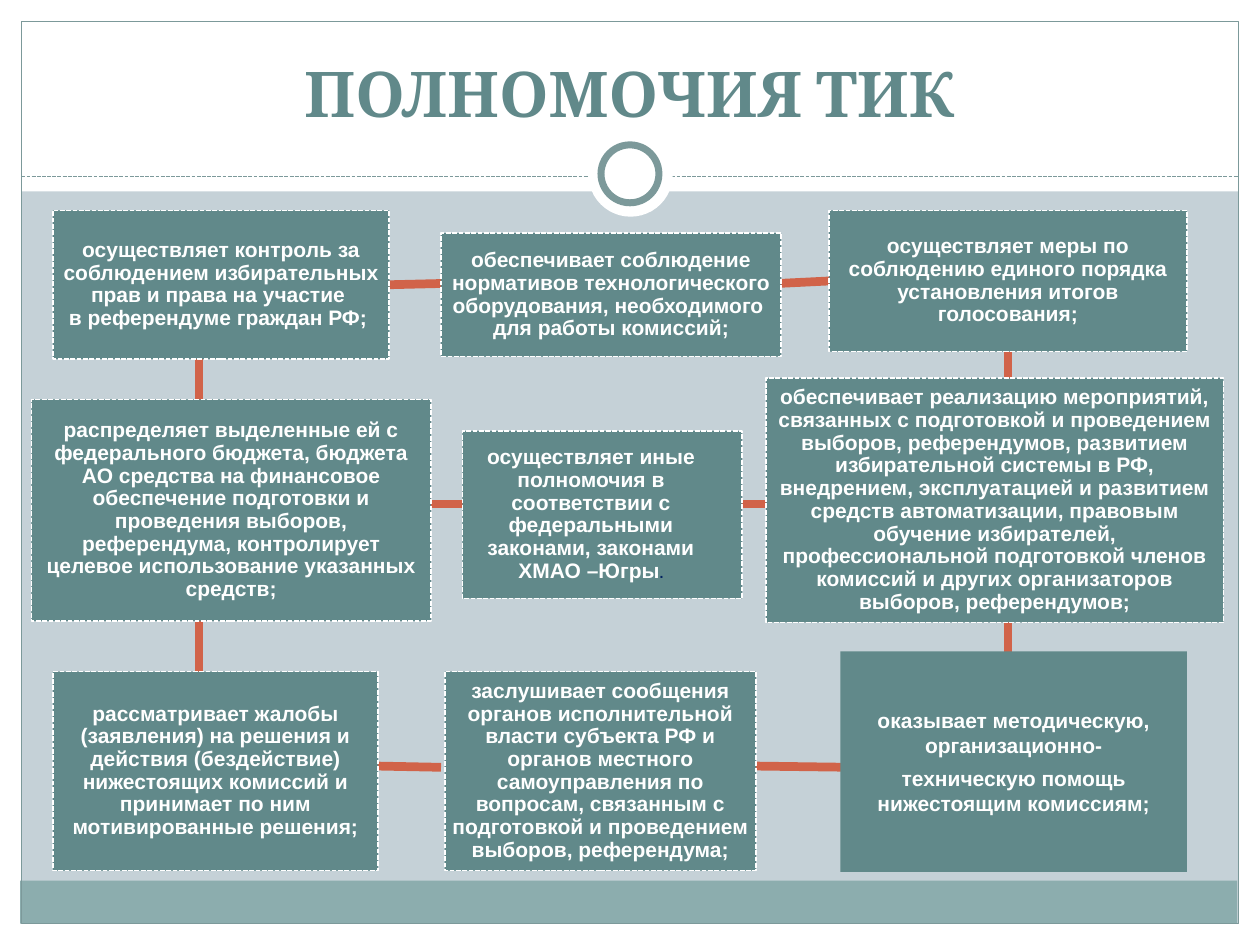
from dataclasses import dataclass
from typing import Optional

import pptx
import pptx.dml.color
import pptx.enum.dml
import pptx.enum.shapes
import pptx.enum.text
import pptx.oxml
import pptx.util

PX = 9144
TEAL, TEAL_LINE, ORANGE, WHITE, NAVY = "61898A", "7C999A", "D16349", "FFFFFF", "002060"
SHAPES = pptx.enum.shapes.MSO_SHAPE
SYSTEM_DASH = pptx.enum.dml.MSO_LINE.SQUARE_DOT
CENTER = pptx.enum.text.PP_ALIGN.CENTER
TOP, LEFT, BOTTOM, RIGHT = range(4)


@dataclass
class Area:
    left: int
    top: int
    width: int
    height: int
    geometry: object = SHAPES.RECTANGLE
    fill: Optional[str] = WHITE
    line: Optional[str] = None
    weight: float = 0.75
    dashed: bool = False


@dataclass
class Duty:
    name: str
    bounds: tuple[int, int, int, int]
    paragraphs: list[str]
    insets: tuple[int, int, int, int] = (3, 3, 3, 3)
    border: Optional[str] = WHITE
    spacing: float = 0.9
    ending: str = ""


@dataclass
class Link:
    begin: tuple[int, int]
    end: tuple[int, int]
    begin_join: Optional[tuple[str, int]] = None
    end_join: Optional[tuple[str, int]] = None


FRAME = [
    Area(0, 733, 1000, 17),
    Area(0, 0, 1000, 152),
    Area(0, 0, 17, 750),
    Area(983, 0, 17, 750),
    Area(16, 699, 966, 34, fill="8CADAE"),
    Area(17, 17, 966, 716, fill=None, line=TEAL_LINE),
]
RINGS = [
    Area(467, 105, 67, 67, SHAPES.OVAL),
    Area(477, 115, 46, 46, SHAPES.OVAL, line=TEAL_LINE, weight=4),
]
WIDE = (5, 5, 5, 5)
DUTIES = [
    Duty("control", (42, 167, 267, 118),
         ["осуществляет контроль за соблюдением избирательных прав и права на участие \n"
          "в референдуме граждан РФ; "], WIDE),
    Duty("equipment", (350, 185, 270, 98),
         ["обеспечивает соблюдение нормативов технологического оборудования, необходимого \n"
          "для работы комиссий;"], WIDE),
    Duty("events", (608, 300, 363, 194),
         ["обеспечивает реализацию мероприятий, связанных с подготовкой и проведением выборов, "
          "референдумов, развитием избирательной системы в РФ, внедрением, эксплуатацией и "
          "развитием средств автоматизации, правовым обучение избирателей, профессиональной "
          "подготовкой членов комиссий и других организаторов выборов, референдумов;"], WIDE),
    Duty("results", (658, 167, 284, 112),
         ["осуществляет меры по соблюдению единого порядка установления итогов голосования;"], WIDE),
    Duty("funds", (25, 317, 317, 176),
         ["распределяет выделенные ей с федерального бюджета, бюджета АО средства на финансовое "
          "обеспечение подготовки и проведения выборов, референдума, контролирует целевое "
          "использование указанных средств;"], WIDE),
    Duty("assistance", (667, 517, 275, 175),
         ["оказывает методическую, организационно-", "техническую помощь нижестоящим комиссиям;"],
         border=None, spacing=1.0),
    Duty("reports", (353, 533, 247, 158),
         ["заслушивает сообщения органов исполнительной власти субъекта РФ и органов местного "
          "самоуправления по вопросам, связанным с подготовкой и проведением выборов, референдума;"]),
    Duty("complaints", (42, 533, 258, 158),
         ["рассматривает жалобы (заявления) на решения и действия (бездействие) нижестоящих "
          "комиссий и принимает по ним мотивированные решения;"]),
    Duty("other", (367, 342, 222, 133),
         ["осуществляет иные полномочия в соответствии с федеральными законами, законами ХМАО –Югры"],
         insets=(0, 3, 18, 3), ending="."),
]
LINKS = [
    Link((800, 267), (800, 308), begin_join=("results", BOTTOM)),
    Link((800, 483), (800, 525)),
    Link((158, 275), (158, 325)),
    Link((308, 225), (350, 225), begin_join=("control", RIGHT)),
    Link((333, 400), (375, 400)),
    Link((617, 225), (658, 225), end_join=("results", LEFT)),
    Link((583, 400), (625, 400)),
    Link((600, 608), (675, 609)),
    Link((300, 608), (350, 609)),
    Link((158, 492), (158, 533)),
]


def color(value: str) -> pptx.dml.color.RGBColor:
    return pptx.dml.color.RGBColor.from_string(value)


def style_line(line, value: str, weight: float, dashed: bool) -> None:
    line.color.rgb = color(value)
    line.width = pptx.util.Pt(weight)
    if dashed:
        line.dash_style = SYSTEM_DASH


def draw_area(slide, area: Area):
    bounds = (area.left, area.top, area.width, area.height)
    shape = slide.shapes.add_shape(area.geometry, *(value * PX for value in bounds))
    shape.shadow.inherit = False
    if area.fill:
        shape.fill.solid()
        shape.fill.fore_color.rgb = color(area.fill)
    else:
        shape.fill.background()
    if area.line:
        style_line(shape.line, area.line, area.weight, area.dashed)
    else:
        shape.line.fill.background()
    return shape


def draw_line(slide, begin: tuple[int, int], end: tuple[int, int], value: str,
              weight: float, dashed: bool = False):
    connector = slide.shapes.add_connector(
        pptx.enum.shapes.MSO_CONNECTOR.STRAIGHT, *(number * PX for number in begin + end))
    style_line(connector.line, value, weight, dashed)
    properties = connector._element.spPr
    properties.append(pptx.oxml.parse_xml(
        '<a:effectLst xmlns:a="http://schemas.openxmlformats.org/drawingml/2006/main"/>'))
    return connector


def add_run(paragraph, text: str, size: float, value: str, font: str = "Arial") -> None:
    run = paragraph.add_run()
    run.text = text
    run.font.name = font
    run.font.size = pptx.util.Pt(size)
    run.font.bold = True
    run.font.color.rgb = color(value)


def draw_duty(slide, duty: Duty):
    shape = draw_area(slide, Area(*duty.bounds, fill=TEAL, line=duty.border, weight=0.9, dashed=True))
    frame = shape.text_frame
    frame.word_wrap = True
    frame.vertical_anchor = pptx.enum.text.MSO_ANCHOR.MIDDLE
    frame.margin_left, frame.margin_top, frame.margin_right, frame.margin_bottom = (
        value * PX for value in duty.insets)
    for index, text in enumerate(duty.paragraphs):
        paragraph = frame.add_paragraph() if index else frame.paragraphs[0]
        paragraph.alignment = CENTER
        paragraph.line_spacing = duty.spacing
        paragraph.space_after = pptx.util.Pt(4.2)
        for position, part in enumerate(text.split("\n")):
            if position:
                paragraph.add_line_break()
            add_run(paragraph, part, 12, WHITE)
    if duty.ending:
        add_run(paragraph, duty.ending, 8, NAVY)
    return shape


def write_title(slide) -> None:
    title = slide.shapes.title
    title.left, title.top, title.width, title.height = (
        value * PX for value in (33, 25, 933, 83))
    title.text_frame.vertical_anchor = pptx.enum.text.MSO_ANCHOR.BOTTOM
    paragraph = title.text_frame.paragraphs[0]
    paragraph.alignment = CENTER
    add_run(paragraph, "ПОЛНОМОЧИЯ ТИК", 36, TEAL, "Cambria")


def main() -> None:
    presentation = pptx.Presentation()
    presentation.slide_width, presentation.slide_height = 1000 * PX, 750 * PX
    slide = presentation.slides.add_slide(presentation.slide_layouts[5])
    slide.background.fill.solid()
    slide.background.fill.fore_color.rgb = color("C5D1D7")
    for area in FRAME:
        draw_area(slide, area)
    draw_line(slide, (17, 140), (983, 140), TEAL_LINE, 0.75, dashed=True)
    for ring in RINGS:
        draw_area(slide, ring)
    title_element = slide.shapes.title._element
    slide.shapes._spTree.append(title_element)
    write_title(slide)
    connectors = [draw_line(slide, link.begin, link.end, ORANGE, 5) for link in LINKS]
    boxes = {duty.name: draw_duty(slide, duty) for duty in DUTIES}
    for link, connector in zip(LINKS, connectors):
        if link.begin_join:
            name, side = link.begin_join
            connector.begin_connect(boxes[name], side)
        if link.end_join:
            name, side = link.end_join
            connector.end_connect(boxes[name], side)
    presentation.save("out.pptx")


if __name__ == "__main__":
    main()
